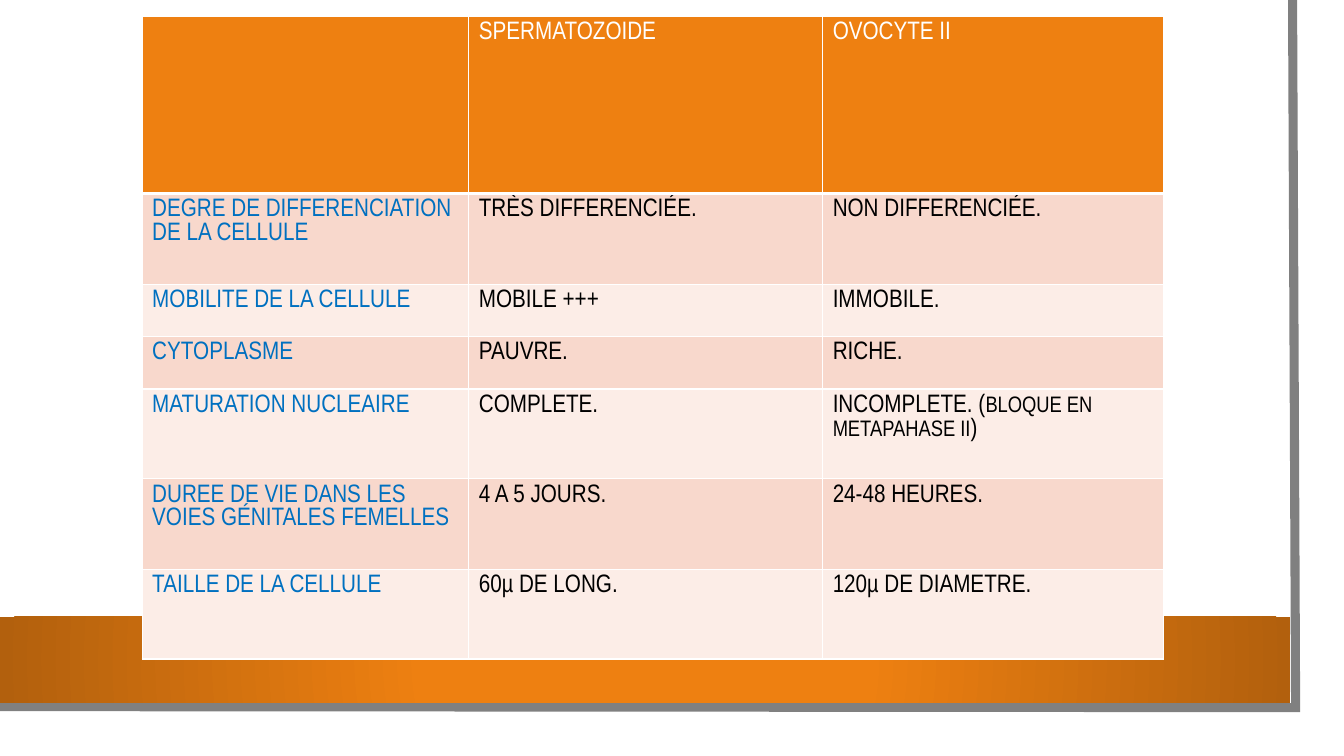
from lxml.etree import SubElement
from pptx import Presentation
from pptx.dml.color import RGBColor
from pptx.enum.shapes import MSO_SHAPE
from pptx.oxml import parse_xml
from pptx.oxml.ns import nsdecls, qn
from pptx.util import Inches, Pt

COLORS = {
    "white": "FFFFFF",
    "black": "000000",
    "frame": "808080",
    "orange": "EE8011",
    "dark_orange": "B2600D",
    "label": "0070C0",
    "band_dark": "F8D8CC",
    "band_light": "FCEDE7",
}
COLUMN_WIDTHS = [3.24, 3.51, 3.38]
ROW_HEIGHTS = [1.76, 0.9, 0.52, 0.52, 0.89, 0.9, 0.89]
COMPARISON = [
    ["", "SPERMATOZOIDE", "OVOCYTE II"],
    ["DEGRE DE DIFFERENCIATION DE LA CELLULE", "TRÈS DIFFERENCIÉE.", "NON DIFFERENCIÉE."],
    ["MOBILITE DE LA CELLULE", "MOBILE +++", "IMMOBILE."],
    ["CYTOPLASME", "PAUVRE.", "RICHE."],
    ["MATURATION NUCLEAIRE", "COMPLETE.",
     [("INCOMPLETE. (", 18), ("BLOQUE EN METAPAHASE II", 16), (")", 18)]],
    ["DUREE DE VIE DANS LES VOIES GÉNITALES FEMELLES", "4 A 5 JOURS.", "24-48 HEURES."],
    ["TAILLE DE LA CELLULE", "60µ DE LONG.", "120µ DE DIAMETRE."],
]


def rgb(name):
    return RGBColor.from_string(COLORS[name])


class SlideBuilder:
    font_name = "Arial Narrow"
    font_size = 18
    line_spacing = 1.0

    def __init__(self, slide):
        self.slide = slide

    def rectangle(self, left, top, width, height, color):
        shape = self.slide.shapes.add_shape(
            MSO_SHAPE.RECTANGLE, Inches(left), Inches(top), Inches(width), Inches(height))
        shape.shadow.inherit = False
        shape.fill.solid()
        shape.fill.fore_color.rgb = rgb(color)
        shape.line.fill.background()
        return shape

    def radial_rectangle(self, left, top, width, height, stops):
        shape = self.rectangle(left, top, width, height, stops[0][1])
        stop_xml = "".join(
            f'<a:gs pos="{position * 1000}"><a:srgbClr val="{COLORS[color]}"/></a:gs>'
            for position, color in stops)
        gradient = parse_xml(
            f'<a:gradFill {nsdecls("a")} rotWithShape="1"><a:gsLst>{stop_xml}</a:gsLst>'
            '<a:path path="circle"><a:fillToRect l="50000" t="50000" r="50000" b="50000"/>'
            '</a:path></a:gradFill>')
        properties = shape.element.spPr
        properties.replace(properties.find(qn("a:solidFill")), gradient)

    def open_line(self, points, color, width):
        start, *others = [(Inches(x), Inches(y)) for x, y in points]
        builder = self.slide.shapes.build_freeform(*start)
        builder.add_line_segments(others, close=False)
        shape = builder.convert_to_shape()
        shape.shadow.inherit = False
        shape.fill.background()
        shape.line.color.rgb = rgb(color)
        shape.line.width = Pt(width)
        outline = shape.element.spPr.find(qn("a:ln"))
        SubElement(outline, qn("a:miter"), lim="800000")

    def table(self, left, top, column_widths, row_heights, rows):
        frame = self.slide.shapes.add_table(
            len(rows), len(column_widths), Inches(left), Inches(top),
            Inches(sum(column_widths)), Inches(sum(row_heights)))
        table = frame.table
        table.first_row = False
        table.horz_banding = False
        for column, width in zip(table.columns, column_widths):
            column.width = Inches(width)
        for row, height in zip(table.rows, row_heights):
            row.height = Inches(height)
        for row_index, row in enumerate(rows):
            for column_index, content in enumerate(row):
                self.cell(table.cell(row_index, column_index), content, row_index, column_index)

    def cell(self, cell, content, row_index, column_index):
        if row_index == 0:
            fill, color = "orange", "white"
        else:
            fill = "band_dark" if row_index % 2 else "band_light"
            color = "black" if column_index else "label"
        self.borders(cell, {"L": 1, "R": 1, "T": 3 if row_index == 1 else 1,
                            "B": 3 if row_index == 0 else 1})
        cell.fill.solid()
        cell.fill.fore_color.rgb = rgb(fill)
        paragraph = cell.text_frame.paragraphs[0]
        paragraph.line_spacing = self.line_spacing
        pieces = [(content, self.font_size)] if isinstance(content, str) else content
        for text, size in pieces:
            if text:
                run = paragraph.add_run()
                run.text = text
                run.font.name = self.font_name
                run.font.size = Pt(size)
                run.font.color.rgb = rgb(color)

    def borders(self, cell, widths):
        properties = cell._tc.get_or_add_tcPr()
        for side, width in widths.items():
            line = SubElement(properties, qn(f"a:ln{side}"), w=str(Pt(width)))
            solid = SubElement(line, qn("a:solidFill"))
            SubElement(solid, qn("a:srgbClr"), val=COLORS["white"])


def main():
    presentation = Presentation()
    presentation.slide_width = Inches(13.33)
    presentation.slide_height = Inches(7.5)
    builder = SlideBuilder(presentation.slides.add_slide(presentation.slide_layouts[6]))
    builder.rectangle(0, 0, 13.1, 7.27, "white")
    builder.open_line([(12.82, 0), (12.85, 7.02), (-0.03, 7.01)], "frame", 6.5)
    builder.radial_rectangle(0, 6.12, 12.8, 0.85, [(34, "orange"), (100, "dark_orange")])
    builder.table(1.41, 0.16, COLUMN_WIDTHS, ROW_HEIGHTS, COMPARISON)
    presentation.save("out.pptx")


if __name__ == "__main__":
    main()
